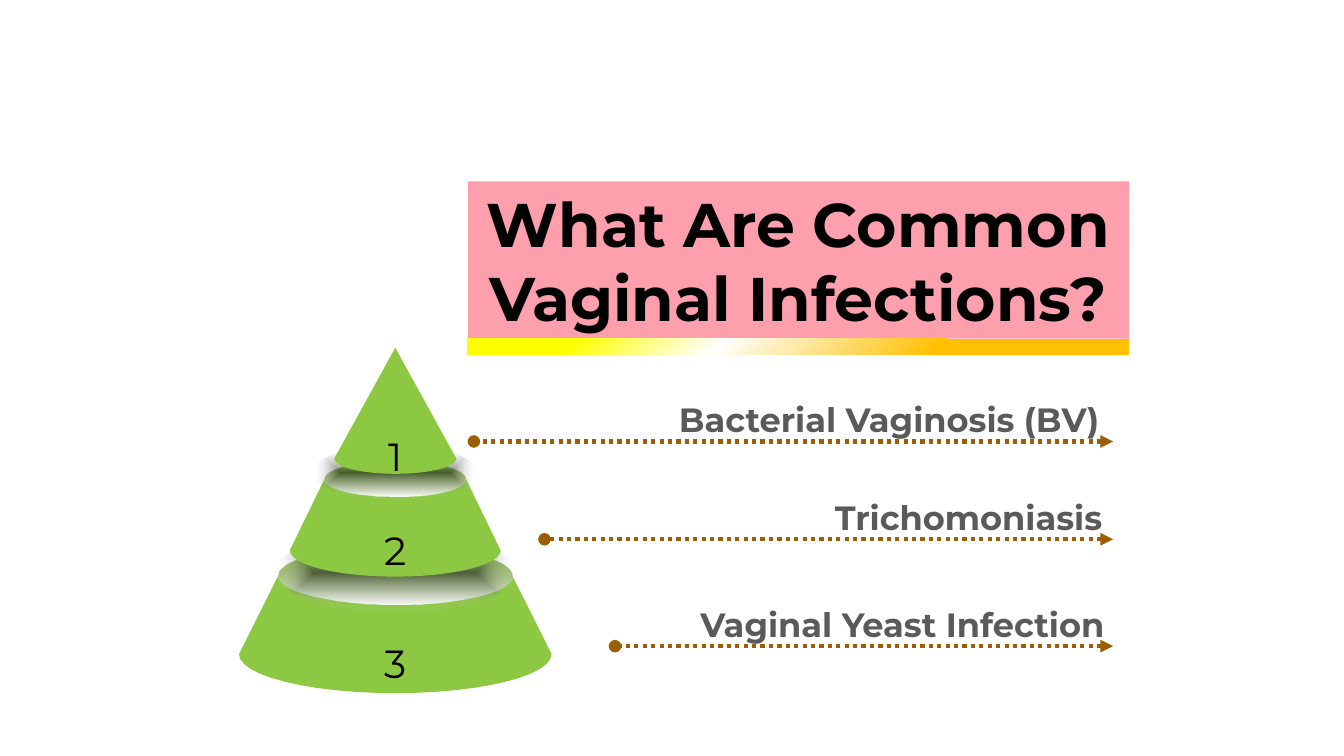
from collections import namedtuple
from math import cos, pi, sin

from pptx import Presentation
from pptx.dml.color import RGBColor
from pptx.enum.dml import MSO_LINE
from pptx.enum.shapes import MSO_CONNECTOR, MSO_SHAPE
from pptx.enum.text import MSO_ANCHOR, MSO_AUTO_SIZE, PP_ALIGN
from pptx.oxml import parse_xml
from pptx.oxml.ns import nsdecls, qn
from pptx.util import Inches, Pt

GREEN = RGBColor(0x8C, 0xC8, 0x41)
PINK = RGBColor(0xFD, 0x77, 0x8A)
BROWN = RGBColor(0x9B, 0x5E, 0x05)
GREY = RGBColor(0x5A, 0x5A, 0x5A)
MID = RGBColor(0x76, 0x76, 0x76)
BLACK = RGBColor(0, 0, 0)
WHITE = RGBColor(255, 255, 255)
YELLOW = RGBColor(255, 255, 0)
AMBER = RGBColor(0xFF, 0xC0, 0)

# Gradient stops: place, colour, opacity (all shares in percent)
RING = [(0, MID, 0), (100, WHITE, 100)]
SHADE = [(0, BLACK, 50), (100, WHITE, 0)]
GLOW = [(16, YELLOW, 100), (38, WHITE, 100), (71, AMBER, 100)]
DOWN = '<a:lin ang="5400000" scaled="0"/>'
INWARD = ('<a:path path="shape"><a:fillToRect l="50000" t="50000" '
          'r="50000" b="50000"/></a:path>')
CORNER = '<a:path path="circle"><a:fillToRect r="100000" b="100000"/></a:path>'

# Half widths and heights are percents of the pyramid's box
Tier = namedtuple("Tier", "upper top lower base shade level mark")
TIERS = [
    Tier(0, 0, 19.52, 32.07, 0, 0, 23.03),
    Tier(22.58, 37.9, 33.71, 58.6, 25.97, 36.15, 50.15),
    Tier(37.42, 65.89, 50, 88.63, 38.55, 65.01, 82.8),
]
# Text, line height, label left, width, height, arrow height
ROWS = [
    ("Bacterial Vaginosis (BV)", 1.4, 24.92, 74.45, 25.19, 23.68),
    ("Trichomoniasis", 1.2, 42.74, 57.1, 22.18, 60.15),
    ("Vaginal Yeast Infection", 1.2, 28.08, 72.08, 22.18, 100),
]


def part(box, left, top, width, height):
    """Return the part of a box given by percents of its size."""
    x, y, w, h = box
    return (int(x + w * left / 100), int(y + h * top / 100),
            int(w * width / 100), int(h * height / 100))


def apply(item, **values):
    for name, value in values.items():
        setattr(item, name, value)


def plain(shape, color=None):
    """Remove shadow and outline, and fill with a colour if given."""
    shape.shadow.inherit = False
    shape.line.fill.background()
    if color is not None:
        shape.fill.solid()
        shape.fill.fore_color.rgb = color
    return shape


def blend(shape, stops, course):
    """Fill a shape with a gradient that runs along the course."""
    marks = "".join(
        f'<a:gs pos="{place * 1000}"><a:srgbClr val="{color}">'
        f'<a:alpha val="{alpha * 1000}"/></a:srgbClr></a:gs>'
        for place, color, alpha in stops)
    shape.fill.background()
    props = shape.element.spPr
    props.replace(props.find(qn("a:noFill")), parse_xml(
        f'<a:gradFill {nsdecls("a")} rotWithShape="1">'
        f'<a:gsLst>{marks}</a:gsLst>{course}</a:gradFill>'))


def write(frame, text, color, align, size, bold=False, space=None):
    para = frame.paragraphs[0]
    apply(para, text=text, alignment=align, line_spacing=space)
    font = para.runs[0].font
    apply(font, name="Montserrat", size=Pt(size), bold=bold)
    font.color.rgb = color


def label(slide, area, wrap, *style):
    frame = slide.shapes.add_textbox(*area).text_frame
    apply(frame, word_wrap=wrap, auto_size=MSO_AUTO_SIZE.SHAPE_TO_FIT_TEXT)
    write(frame, *style)


def disc(slide, box, half, level, ratio, stops, course):
    """Draw a flat ellipse, its height a ratio of its width."""
    x, y, width, _ = part(box, 50 - half, level, 2 * half, 0)
    high = int(width * ratio)
    oval = slide.shapes.add_shape(
        MSO_SHAPE.OVAL, x, y - high // 2, width, high)
    blend(plain(oval), stops, course)


def body(slide, box, tier):
    """Draw a cone slice with a rounded base and top."""
    x, y, w, h = box
    steps = 24
    points = []
    for half, level, turn in ((tier.lower, tier.base, 0),
                              (tier.upper, tier.top, pi)):
        rx = w * half / 100
        for step in range(steps + 1 if half else 1):
            angle = turn + pi * step / steps
            points.append((int(x + w / 2 + rx * cos(angle)),
                           int(y + h * level / 100 + rx / 4 * sin(angle))))
    pen = slide.shapes.build_freeform(*points[0], scale=1.0)
    pen.add_line_segments(points[1:], close=True)
    plain(pen.convert_to_shape(), GREEN)


def pyramid(slide, box):
    for tier in reversed(TIERS):
        body(slide, box, tier)
        if tier.upper:
            disc(slide, box, tier.upper, tier.top, 0.25, RING, DOWN)
            disc(slide, box, tier.shade, tier.level, 0.33, SHADE, INWARD)
    for number, tier in enumerate(TIERS, 1):
        label(slide, part(box, 42.58, tier.mark, 14.84, 16.62), False,
              str(number), BLACK, PP_ALIGN.CENTER, 28)


def arrow(slide, area):
    """Draw a dotted line with a dot at left and a head at right."""
    x, y, width, _ = area
    link = slide.shapes.add_connector(
        MSO_CONNECTOR.STRAIGHT, x + width, y, x, y)
    link.line.color.rgb = BROWN
    apply(link.line, width=Pt(3), dash_style=MSO_LINE.ROUND_DOT)
    props = link.element.spPr
    line = props.find(qn("a:ln"))
    for tag, kind in (("headEnd", "triangle"), ("tailEnd", "oval")):
        line.append(parse_xml(f'<a:{tag} {nsdecls("a")} type="{kind}"/>'))
    props.append(parse_xml(f'<a:effectLst {nsdecls("a")}/>'))


def causes(slide, box):
    """List the infections, each on its arrow."""
    for row, (text, space, left, width, high, level) in enumerate(ROWS):
        label(slide, part(box, left, level + 1.5 - high, width, high), True,
              text, GREY, PP_ALIGN.RIGHT, 24, True, space)
        start = row * 11.04
        arrow(slide, part(box, start, level, 100 - start, 0))


def title(slide, box):
    split = 90.7
    panel = plain(slide.shapes.add_shape(
        MSO_SHAPE.RECTANGLE, *part(box, 0, 0, 100, split)), PINK)
    tint = panel.element.spPr.find(qn("a:solidFill"))[0]
    tint.append(parse_xml(f'<a:alpha {nsdecls("a")} val="70000"/>'))
    frame = panel.text_frame
    apply(frame, word_wrap=True, vertical_anchor=MSO_ANCHOR.MIDDLE)
    write(frame, "What Are Common Vaginal Infections?", BLACK,
          PP_ALIGN.CENTER, 44, True)
    bar = slide.shapes.add_shape(
        MSO_SHAPE.RECTANGLE, *part(box, 0, split, 100, 100 - split))
    blend(plain(bar), GLOW, CORNER)


def main():
    deck = Presentation()
    apply(deck, slide_width=Inches(13.33), slide_height=Inches(7.5))
    slide = deck.slides.add_slide(deck.slide_layouts[6])
    page = (0, 0, deck.slide_width, deck.slide_height)
    pyramid(slide, part(page, 17.78, 46, 23.26, 45.73))
    causes(slide, part(page, 35.26, 50, 47.56, 35.47))
    title(slide, part(page, 34.81, 24, 49.21, 22.93))
    deck.save("out.pptx")


if __name__ == "__main__":
    main()
